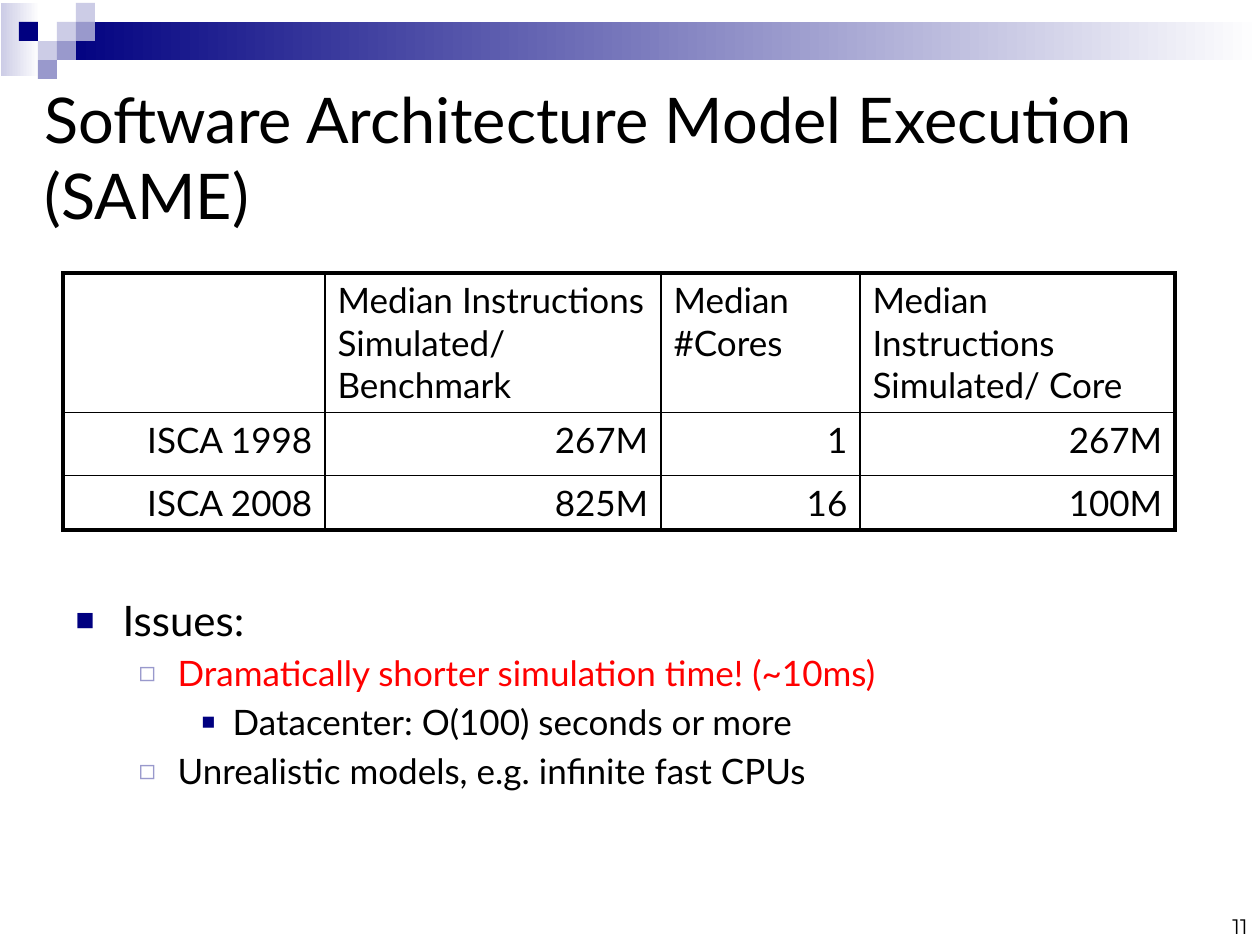
from lxml.etree import SubElement
from pptx import Presentation
from pptx.dml.color import RGBColor
from pptx.enum.shapes import MSO_SHAPE
from pptx.enum.text import MSO_ANCHOR, MSO_AUTO_SIZE, PP_ALIGN
from pptx.oxml import parse_xml
from pptx.oxml.ns import nsdecls, qn
from pptx.util import Pt

BLACK = RGBColor(0x00, 0x00, 0x00)
WHITE = RGBColor(0xFF, 0xFF, 0xFF)
RED = RGBColor(0xFF, 0x00, 0x00)
NAVY = RGBColor(0x00, 0x00, 0x80)
LILAC = RGBColor(0x99, 0x99, 0xCC)
PALE = RGBColor(0xCC, 0xCC, 0xE6)

TITLE = "Software Architecture Model Execution (SAME)"
PAGE_NUMBER = "11"
RESULTS = [
    ["", "Median Instructions Simulated/ Benchmark", "Median #Cores",
     "Median Instructions Simulated/ Core"],
    ["ISCA 1998", "267M", "1", "267M"],
    ["ISCA 2008", "825M", "16", "100M"],
]
COLUMN_WIDTHS = [262, 336, 199, 315]
ROW_HEIGHTS = [134, 63, 54]

# level, text, size, colour
ISSUES = [
    (0, "Issues:", 24, BLACK),
    (1, "Dramatically shorter simulation time! (~10ms)", 20, RED),
    (2, "Datacenter: O(100) seconds or more", 20, BLACK),
    (1, "Unrealistic models, e.g. infinite fast CPUs", 20, BLACK),
]
# per level: symbol, colour, size in %, left margin and hanging indent in px
BULLETS = [("■", NAVY, 75, 47, 47), ("◻", LILAC, 80, 102, 39), ("■", NAVY, 65, 157, 31)]

# left, top, width, height, start colour of the fade to white
BANDS = [(1, 3, 39, 73, PALE), (58, 22, 1203, 38, NAVY)]
TILE = 19
TILE_LEFT, TILE_TOP = 19, 3
# column, row, colour
TILES = [(2, 1, PALE), (3, 0, PALE), (3, 1, LILAC), (1, 2, PALE),
         (0, 1, NAVY), (2, 2, LILAC), (1, 3, LILAC)]


def px(length):
    return round(length * 914400 / 126)


def place(shape, *box):
    shape.left, shape.top, shape.width, shape.height = map(px, box)


def write(paragraph, text, size=20, font="Lato", color=BLACK, align=PP_ALIGN.LEFT, before=0):
    paragraph.text = text
    paragraph.alignment = align
    paragraph.space_before = Pt(before)
    paragraph.font.size = Pt(size)
    paragraph.font.name = font
    paragraph.font.color.rgb = color


def add_bullet(paragraph, symbol, color, percent, margin, hanging):
    props = paragraph._p.get_or_add_pPr()
    props.set("marL", str(px(margin)))
    props.set("indent", str(-px(hanging)))
    bullet_color = SubElement(props, qn("a:buClr"))
    SubElement(bullet_color, qn("a:srgbClr"), val=str(color))
    SubElement(props, qn("a:buSzPct"), val=str(percent * 1000))
    SubElement(props, qn("a:buChar"), char=symbol)


def add_block(slide, left, top, width, height, color, fade=False):
    block = slide.shapes.add_shape(MSO_SHAPE.RECTANGLE, *map(px, (left, top, width, height)))
    block.shadow.inherit = False
    block.line.fill.background()
    if fade:
        block.fill.gradient()
        block.fill.gradient_angle = 0
        for stop, shade in zip(block.fill.gradient_stops, (color, WHITE)):
            stop.color.rgb = shade
    else:
        block.fill.solid()
        block.fill.fore_color.rgb = color


def set_borders(cell, widths):
    """Draw black borders; widths maps the sides L, R, T, B to points."""
    for position, (side, width) in enumerate(widths.items()):
        cell._tc.get_or_add_tcPr().insert(position, parse_xml(
            f'<a:ln{side} {nsdecls("a")} w="{Pt(width)}"><a:solidFill>'
            f'<a:srgbClr val="{BLACK}"/></a:solidFill></a:ln{side}>'))


def add_results(slide):
    last_row, last_col = len(RESULTS) - 1, len(COLUMN_WIDTHS) - 1
    table = slide.shapes.add_table(
        len(RESULTS), len(COLUMN_WIDTHS), px(63), px(273),
        px(sum(COLUMN_WIDTHS)), px(sum(ROW_HEIGHTS))).table
    table.first_row = table.horz_banding = False
    for column, width in zip(table.columns, COLUMN_WIDTHS):
        column.width = px(width)
    for row, height in zip(table.rows, ROW_HEIGHTS):
        row.height = px(height)
    for r, values in enumerate(RESULTS):
        for c, value in enumerate(values):
            cell = table.cell(r, c)
            cell.fill.background()
            write(cell.text_frame.paragraphs[0], value,
                  align=PP_ALIGN.RIGHT if r else PP_ALIGN.LEFT)
            outer = {"L": c == 0, "R": c == last_col, "T": r == 0, "B": r == last_row}
            set_borders(cell, {side: 2.25 if edge else 1 for side, edge in outer.items()})


def main():
    deck = Presentation()
    deck.slide_width, deck.slide_height = px(1260), px(945)
    slide = deck.slides.add_slide(deck.slide_layouts[1])

    for *box, color in BANDS:
        add_block(slide, *box, color, fade=True)
    for column, row, color in TILES:
        add_block(slide, TILE_LEFT + column * TILE, TILE_TOP + row * TILE, TILE, TILE, color)

    title = slide.shapes.title
    place(title, 32, 105, 1197, 103)
    title.text_frame.auto_size = MSO_AUTO_SIZE.NONE
    title.text_frame.vertical_anchor = MSO_ANCHOR.MIDDLE
    write(title.text_frame.paragraphs[0], TITLE, size=36)

    add_results(slide)

    body = slide.placeholders[1]
    place(body, 63, 588, 1134, 282)
    frame = body.text_frame
    frame.auto_size = MSO_AUTO_SIZE.NONE
    for i, (level, text, size, color) in enumerate(ISSUES):
        paragraph = frame.add_paragraph() if i else frame.paragraphs[0]
        paragraph.level = level
        add_bullet(paragraph, *BULLETS[level])
        write(paragraph, text, size=size, color=color, before=4 if i else 0)

    number = slide.shapes.add_textbox(*map(px, (966, 912, 294, 33))).text_frame
    number.word_wrap = True
    number.vertical_anchor = MSO_ANCHOR.BOTTOM
    write(number.paragraphs[0], PAGE_NUMBER, size=12, font="Montserrat", align=PP_ALIGN.RIGHT)

    deck.save("out.pptx")


if __name__ == "__main__":
    main()
